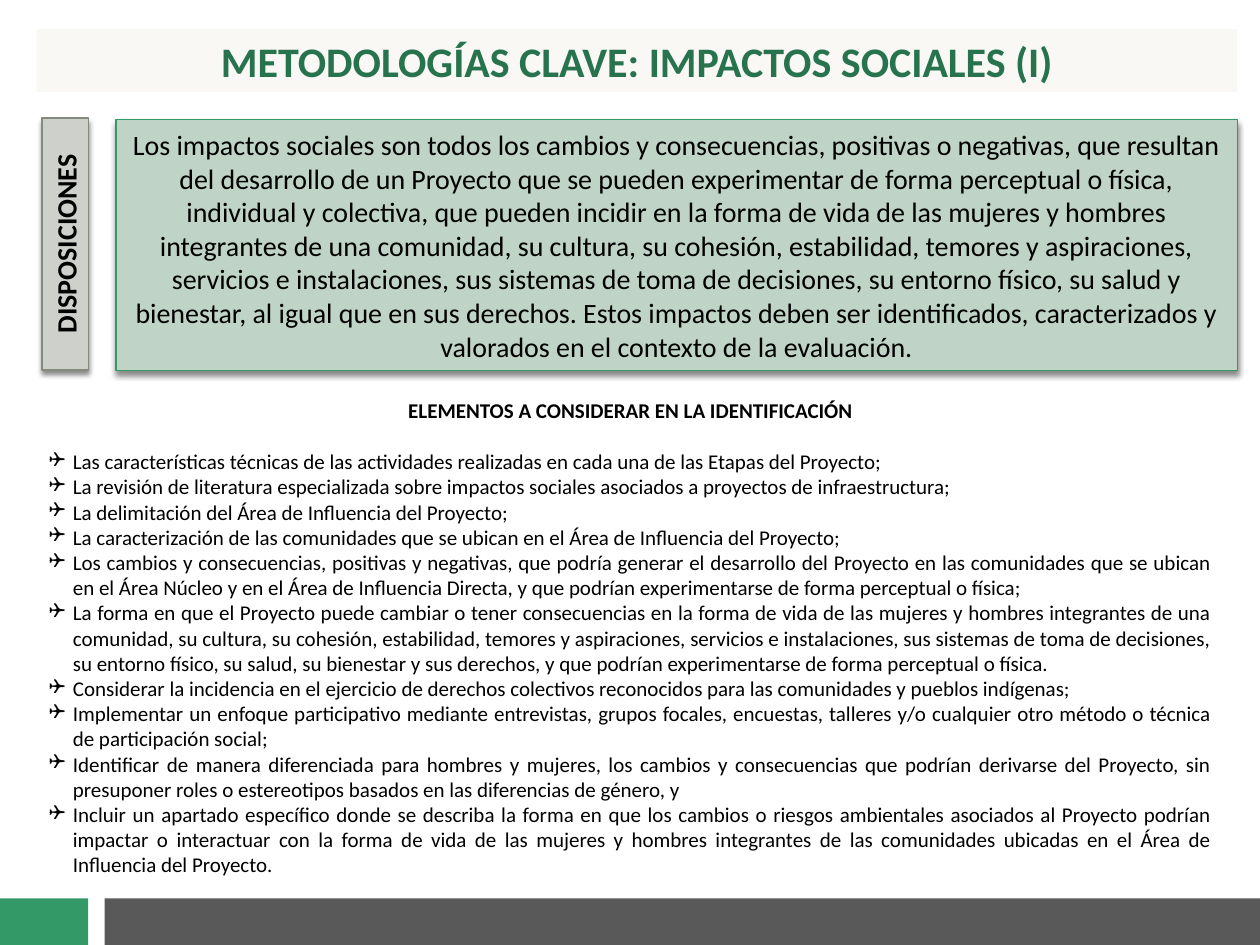
"""Build the slide on key methodologies for social impacts."""
import lxml.etree
import pptx
import pptx.dml.color
import pptx.enum.shapes
import pptx.enum.text
import pptx.oxml.ns
import pptx.util

ALIGN = pptx.enum.text.PP_ALIGN
ANCHOR = pptx.enum.text.MSO_ANCHOR
SLIDE = {"width": 10, "height": 7.5}
GRID = {"columns": 100, "rows": 75}
THEME = {
    "font": "Calibri",
    "ink": "000000",
    "title": "26734D",
    "title_band": "F9F8F5",
    "green": "339966",
    "gray": "595959",
    "panel": "BFD4C6",
    "tab": "CED0CC",
    "tab_line": "858B7C",
    "title_size": 24,
    "panel_size": 16,
    "list_size": 12,
    "line_width": 0.79,
    "indent": 0.19,
    "list_gap": 14.6,
    "bullet": "❑",
    "shadow": {"blur": 3, "distance": 2.4, "angle": 90, "opacity": 45},
}

TITLE = "METODOLOGÍAS CLAVE: IMPACTOS SOCIALES (I)"
TAB = "DISPOSICIONES"
DEFINITION = (
    "Los impactos sociales son todos los cambios y consecuencias, positivas o negativas, que resultan "
    "del desarrollo de un Proyecto que se pueden experimentar de forma perceptual o física, "
    "individual y colectiva, que pueden incidir en la forma de vida de las mujeres y hombres "
    "integrantes de una comunidad, su cultura, su cohesión, estabilidad, temores y aspiraciones, "
    "servicios e instalaciones, sus sistemas de toma de decisiones, su entorno físico, su salud y "
    "bienestar, al igual que en sus derechos. Estos impactos deben ser identificados, caracterizados y "
    "valorados en el contexto de la evaluación."
)
HEADING = "ELEMENTOS A CONSIDERAR EN LA IDENTIFICACIÓN"
ELEMENTS = [
    "Las características técnicas de las actividades realizadas en cada una de las Etapas del Proyecto;",
    "La revisión de literatura especializada sobre impactos sociales asociados a proyectos de infraestructura;",
    "La delimitación del Área de Influencia del Proyecto;",
    "La caracterización de las comunidades que se ubican en el Área de Influencia del Proyecto;",
    "Los cambios y consecuencias, positivas y negativas, que podría generar el desarrollo del Proyecto en las "
    "comunidades que se ubican en el Área Núcleo y en el Área de Influencia Directa, y que podrían "
    "experimentarse de forma perceptual o física;",
    "La forma en que el Proyecto puede cambiar o tener consecuencias en la forma de vida de las mujeres y hombres "
    "integrantes de una comunidad, su cultura, su cohesión, estabilidad, temores y aspiraciones, servicios e "
    "instalaciones, sus sistemas de toma de decisiones, su entorno físico, su salud, su bienestar y sus derechos, "
    "y que podrían experimentarse de forma perceptual o física.",
    "Considerar la incidencia en el ejercicio de derechos colectivos reconocidos para las comunidades y pueblos "
    "indígenas;",
    "Implementar un enfoque participativo mediante entrevistas, grupos focales, encuestas, talleres y/o cualquier "
    "otro método o técnica de participación social;",
    "Identificar de manera diferenciada para hombres y mujeres, los cambios y consecuencias que podrían derivarse "
    "del Proyecto, sin presuponer roles o estereotipos basados en las diferencias de género, y",
    "Incluir un apartado específico donde se describa la forma en que los cambios o riesgos ambientales asociados "
    "al Proyecto podrían impactar o interactuar con la forma de vida de las mujeres y hombres integrantes de las "
    "comunidades ubicadas en el Área de Influencia del Proyecto.",
]

BOXES = [
    {"at": (8.3, 71.3, 91.7, 3.7), "fill": "gray"},
    {"at": (0, 71.3, 7, 3.7), "fill": "green"},
    {"at": (2.9, 2.3, 95.3, 5), "fill": "title_band", "text": TITLE,
     "size": "title_size", "color": "title", "bold": True},
    {"at": (9.2, 9.5, 89, 19.9), "fill": "panel", "line": "green", "text": DEFINITION,
     "size": "panel_size", "color": "ink", "bold": False},
    {"at": (-4.8, 17.5, 20, 3.7), "fill": "tab", "line": "tab_line", "text": TAB,
     "size": "panel_size", "color": "ink", "bold": True, "rotation": 270},
]
LIST_AT = (2.9, 31.1, 94.3, 39.4)


def color(name):
    return pptx.dml.color.RGBColor.from_string(THEME[name])


def place(at):
    column = SLIDE["width"] / GRID["columns"]
    row = SLIDE["height"] / GRID["rows"]
    return [pptx.util.Inches(value * unit) for value, unit in zip(at, (column, row) * 2)]


def apply(target, values):
    for name, value in values.items():
        setattr(target, name, value)


def add_element(parent, tag, **attributes):
    element = lxml.etree.SubElement(parent, pptx.oxml.ns.qn(tag))
    for name, value in attributes.items():
        element.set(name, str(value))
    return element


def add_shadow(box):
    shadow = THEME["shadow"]
    effects = box._element.spPr.find(pptx.oxml.ns.qn("a:effectLst"))
    outer = add_element(effects, "a:outerShdw", blurRad=pptx.util.Pt(shadow["blur"]),
                        dist=pptx.util.Pt(shadow["distance"]), dir=shadow["angle"] * 60000, rotWithShape=0)
    tint = add_element(outer, "a:srgbClr", val=THEME["ink"])
    add_element(tint, "a:alpha", val=shadow["opacity"] * 1000)


def write(para, text, size, ink, bold, align):
    span = para.add_run()
    span.text = text
    para.alignment = align
    apply(span.font, {"name": THEME["font"], "size": pptx.util.Pt(THEME[size]), "bold": bold})
    span.font.color.rgb = color(ink)


def add_box(page, item):
    box = page.shapes.add_shape(pptx.enum.shapes.MSO_SHAPE.RECTANGLE, *place(item["at"]))
    apply(box, {"rotation": item.get("rotation", 0)})
    box.fill.solid()
    box.fill.fore_color.rgb = color(item["fill"])
    if "line" in item:
        box.line.color.rgb = color(item["line"])
        box.line.width = pptx.util.Pt(THEME["line_width"])
    else:
        box.line.fill.background()
    box.shadow.inherit = False
    if "line" in item:
        add_shadow(box)
    if "text" in item:
        apply(box.text_frame, {"word_wrap": True, "vertical_anchor": ANCHOR.MIDDLE})
        write(box.text_frame.paragraphs[0], item["text"], item["size"], item["color"], item["bold"], ALIGN.CENTER)


def add_list(page):
    frame = page.shapes.add_textbox(*place(LIST_AT)).text_frame
    apply(frame, {"word_wrap": True, "vertical_anchor": ANCHOR.TOP})
    write(frame.paragraphs[0], HEADING, "list_size", "ink", True, ALIGN.CENTER)
    indent = pptx.util.Inches(THEME["indent"])
    for index, text in enumerate(ELEMENTS):
        para = frame.add_paragraph()
        para.space_before = pptx.util.Pt(0 if index else THEME["list_gap"])
        properties = para._p.get_or_add_pPr()
        apply_indent = {"marL": indent, "indent": -indent}
        for name, value in apply_indent.items():
            properties.set(name, str(value))
        add_element(properties, "a:buFont", typeface="Wingdings")
        add_element(properties, "a:buChar", char=THEME["bullet"])
        write(para, text, "list_size", "ink", False, ALIGN.JUSTIFY)


def main():
    deck = pptx.Presentation()
    apply(deck, {f"slide_{side}": pptx.util.Inches(length) for side, length in SLIDE.items()})
    page = deck.slides.add_slide(deck.slide_layouts[6])
    for item in BOXES:
        add_box(page, item)
    add_list(page)
    deck.save("out.pptx")


if __name__ == "__main__":
    main()
